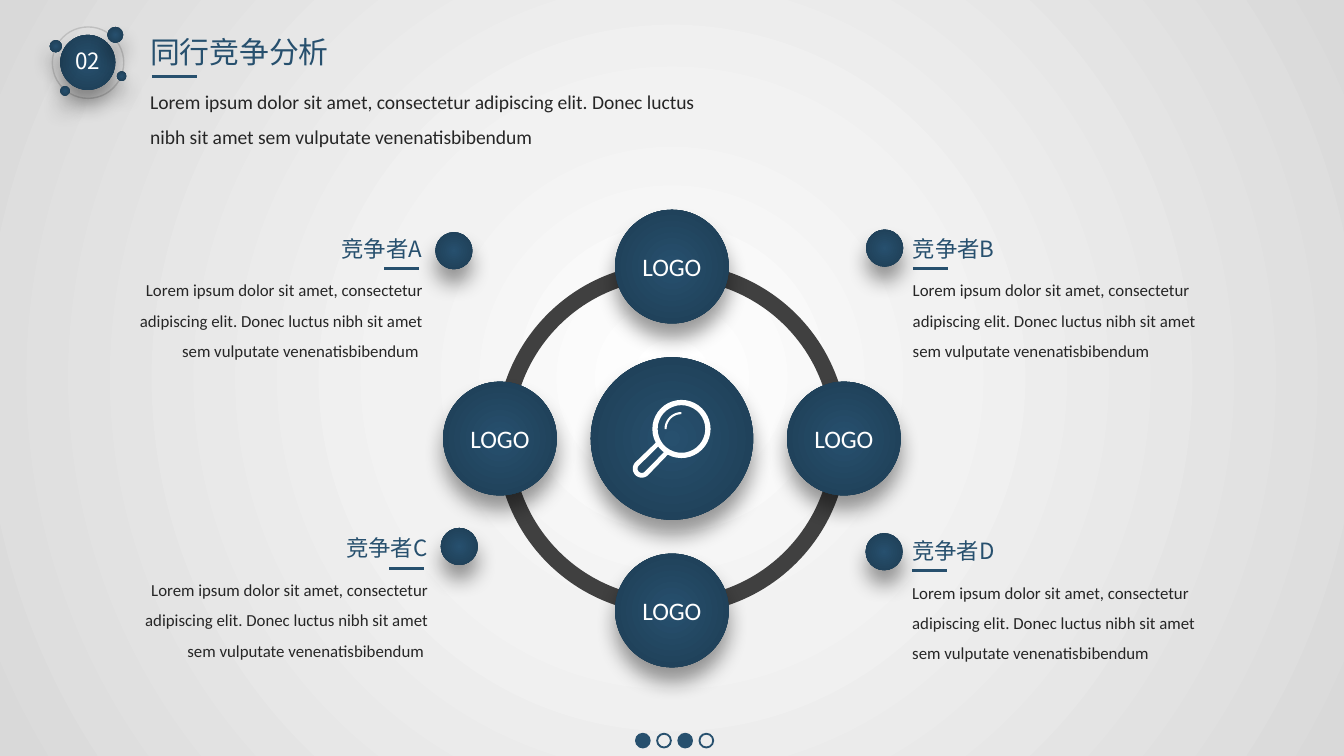
"""Build a competitor analysis slide with a ring of logos around a magnifier."""
import math

import pptx
import pptx.dml.color
import pptx.enum.shapes
import pptx.enum.text
import pptx.oxml
import pptx.oxml.ns
import pptx.util
from pptx.util import Cm

RGBColor = pptx.dml.color.RGBColor
MSO_SHAPE = pptx.enum.shapes.MSO_SHAPE
PP_ALIGN = pptx.enum.text.PP_ALIGN
qn = pptx.oxml.ns.qn

NAVY = RGBColor(0x27, 0x50, 0x6E)
DEEP_NAVY = RGBColor(0x1D, 0x3C, 0x52)
WHITE = RGBColor(0xFF, 0xFF, 0xFF)
PALE = RGBColor(0xF2, 0xF2, 0xF2)
SILVER = RGBColor(0xD9, 0xD9, 0xD9)
ORBIT_GRAY = RGBColor(0xBF, 0xBF, 0xBF)
CHARCOAL = RGBColor(0x40, 0x40, 0x40)
INK = RGBColor(0x26, 0x26, 0x26)
HEADING_FONT, BODY_FONT = "Noto Sans CJK SC", "Calibri"
SPHERE_STOPS = [(0, NAVY), (100, DEEP_NAVY)]
BACKDROP_STOPS = [(0, WHITE), (35, PALE), (100, SILVER)]

SECTION, TITLE = "02", "同行竞争分析"
LOREM = ("Lorem ipsum dolor sit amet, consectetur adipiscing elit. "
         "Donec luctus nibh sit amet sem vulputate venenatisbibendum")
LOGOS = ["LOGO"] * 4
COMPETITORS = [
    ("竞争者A", "left", 8.23, 4.32, 0.07),
    ("竞争者B", "right", 17.0, 4.32, 0.02),
    ("竞争者C", "left", 8.33, 9.98, 0),
    ("竞争者D", "right", 16.99, 10.03, 0.05),
]
BADGE_SPHERES = [(1.14, 0.66, 1.04), (2.03, 0.51, 0.3), (0.94, 0.76, 0.23),
                 (1.14, 1.63, 0.18), (2.21, 1.35, 0.18)]
PAGE_DOTS = [True, False, True, False]
CENTER_X, CENTER_Y = 12.7, 8.29
RING, ORBIT_RADIUS, HUB, SATELLITE = 6.65, 3.25, 3.07, 2.15
LENS, TIP = (12.88, 8.11), (12.13, 8.86)


def set_radial_gradient(fill, owner, stops):
    fill.gradient()
    gradient = next(owner.iter(qn("a:gradFill")))
    gradient.clear()
    marks = "".join(f'<a:gs pos="{position * 1000}"><a:srgbClr val="{color}"/></a:gs>'
                    for position, color in stops)
    template = pptx.oxml.parse_xml(
        f'<a:gradFill {pptx.oxml.ns.nsdecls("a")}><a:gsLst>{marks}</a:gsLst>'
        '<a:path path="circle"><a:fillToRect l="50000" t="50000" r="50000" b="50000"/>'
        '</a:path></a:gradFill>')
    gradient.extend(list(template))


def add_flat(slide, kind, left, top, size, color=None, line=None, width=1):
    shape = slide.shapes.add_shape(kind, Cm(left), Cm(top), Cm(size), Cm(size))
    shape.shadow.inherit = False
    if color is None:
        shape.fill.background()
    else:
        shape.fill.solid()
        shape.fill.fore_color.rgb = color
    if line is None:
        shape.line.fill.background()
    else:
        shape.line.color.rgb = line
        shape.line.width = pptx.util.Pt(width)
    return shape


def add_sphere(slide, left, top, size):
    shape = add_flat(slide, MSO_SHAPE.OVAL, left, top, size)
    set_radial_gradient(shape.fill, shape.element, SPHERE_STOPS)
    effects = next(shape.element.iter(qn("a:effectLst")))
    effects.append(pptx.oxml.parse_xml(
        f'<a:outerShdw {pptx.oxml.ns.nsdecls("a")} blurRad="139700" dist="101600" '
        'dir="5400000" algn="t" rotWithShape="0"><a:srgbClr val="000000">'
        '<a:alpha val="40000"/></a:srgbClr></a:outerShdw>'))
    return shape


def add_centered_sphere(slide, x, y, size):
    return add_sphere(slide, x - size / 2, y - size / 2, size)


def write(frame, text, size, font, color, align=PP_ALIGN.LEFT, spacing=None):
    paragraph = frame.paragraphs[0]
    paragraph.alignment = align
    if spacing:
        paragraph.line_spacing = spacing
    run = paragraph.add_run()
    run.text = text
    run.font.size = pptx.util.Pt(size)
    run.font.name = font
    run.font.color.rgb = color
    latin = run.font._element.find(qn("a:latin"))
    latin.addnext(pptx.oxml.parse_xml(
        f'<a:ea {pptx.oxml.ns.nsdecls("a")} typeface="{font}"/>'))


def add_text(slide, box, text, size, font, color, wrap=True, **style):
    frame = slide.shapes.add_textbox(*map(Cm, box)).text_frame
    frame.word_wrap = wrap
    frame.auto_size = pptx.enum.text.MSO_AUTO_SIZE.SHAPE_TO_FIT_TEXT
    write(frame, text, size, font, color, **style)


def add_underline(slide, start, end, y):
    line = slide.shapes.add_connector(pptx.enum.shapes.MSO_CONNECTOR.STRAIGHT,
                                      Cm(start), Cm(y), Cm(end), Cm(y))
    line.line.color.rgb = NAVY
    line.line.width = pptx.util.Pt(1.5)
    line.element.spPr.append(pptx.oxml.parse_xml(
        f'<a:effectLst {pptx.oxml.ns.nsdecls("a")}/>'))


def arc(center, radius, start, end, steps=36):
    angles = [math.radians(start + (end - start) * i / steps) for i in range(steps + 1)]
    return [(Cm(center[0] + radius * math.cos(angle)),
             Cm(center[1] + radius * math.sin(angle))) for angle in angles]


def add_outline(slide, contours):
    builder = slide.shapes.build_freeform(*contours[0][0], scale=1.0)
    builder.add_line_segments(contours[0][1:], close=True)
    for contour in contours[1:]:
        builder.move_to(*contour[0])
        builder.add_line_segments(contour[1:], close=True)
    shape = builder.convert_to_shape()
    shape.shadow.inherit = False
    shape.fill.solid()
    shape.fill.fore_color.rgb = WHITE
    shape.line.fill.background()


def add_header(slide):
    add_flat(slide, MSO_SHAPE.OVAL, 0.99, 0.51, 1.35, line=ORBIT_GRAY, width=0.75)
    for sphere in BADGE_SPHERES:
        add_sphere(slide, *sphere)
    add_text(slide, (2.59, 0.51, 3.89, 0.94), TITLE, 16, HEADING_FONT, NAVY, wrap=False)
    add_text(slide, (2.59, 1.35, 11.35, 1.57), LOREM, 10.5, BODY_FONT, INK, spacing=1.5)
    add_underline(slide, 2.87, 3.73, 1.45)
    add_text(slide, (1.17, 0.76, 0.97, 0.76), SECTION, 12, HEADING_FONT, WHITE, wrap=False)


def add_ring(slide):
    for start, end in [(108, 162), (54, 108), (0, 54), (162, 0)]:
        segment = add_flat(slide, MSO_SHAPE.BLOCK_ARC, CENTER_X - RING / 2,
                           CENTER_Y - RING / 2, RING, CHARCOAL)
        for index, value in enumerate((start, end, 0.046)):
            segment.adjustments[index] = value
    add_centered_sphere(slide, CENTER_X, CENTER_Y, HUB)
    for index, logo in enumerate(LOGOS):
        angle = math.radians(90 * index - 90)
        sphere = add_centered_sphere(slide, CENTER_X + ORBIT_RADIUS * math.cos(angle),
                                     CENTER_Y + ORBIT_RADIUS * math.sin(angle), SATELLITE)
        frame = sphere.text_frame
        frame.word_wrap = False
        frame.vertical_anchor = pptx.enum.text.MSO_ANCHOR.MIDDLE
        write(frame, logo, 13.5, BODY_FONT, WHITE, align=PP_ALIGN.CENTER)
    add_outline(slide, [arc(LENS, 0.55, 152, 478) + arc(TIP, 0.17, 45, 225),
                        arc(LENS, 0.45, 0, 360),
                        arc(TIP, 0.08, 45, 225) + arc(LENS, 0.55, 143, 127)])
    add_outline(slide, [arc(LENS, 0.32, 180, 270) + arc(LENS, 0.28, 270, 180)])


def add_competitor(slide, name, side, edge, top, dot_shift):
    on_left = side == "left"
    align = PP_ALIGN.RIGHT if on_left else PP_ALIGN.LEFT
    body = LOREM + " " if on_left else LOREM
    for text, offset, width, height, size, font, color, spacing in (
            (body, 0.66, 6.2, 1.98, 9, BODY_FONT, INK, 1.5),
            (name, 0, 4.83, 0.76, 12, HEADING_FONT, NAVY, None)):
        left = edge - width if on_left else edge
        add_text(slide, (left, top + offset, width, height), text, size, font, color,
                 align=align, spacing=spacing)
    start = edge - 0.97 if on_left else edge + 0.25
    add_underline(slide, start, start + 0.66, top + 0.76)
    add_sphere(slide, edge if on_left else edge - 0.63, top + dot_shift, 0.7)


def main():
    presentation = pptx.Presentation()
    presentation.slide_width, presentation.slide_height = Cm(25.4), Cm(14.29)
    slide = presentation.slides.add_slide(presentation.slide_layouts[6])
    set_radial_gradient(slide.background.fill, slide.element, BACKDROP_STOPS)
    for index, filled in enumerate(PAGE_DOTS):
        add_flat(slide, MSO_SHAPE.OVAL, 12.02 + 0.4 * index, 13.87, 0.26,
                 NAVY if filled else None, NAVY)
    add_header(slide)
    add_ring(slide)
    for competitor in COMPETITORS:
        add_competitor(slide, *competitor)
    presentation.save("out.pptx")


if __name__ == "__main__":
    main()
